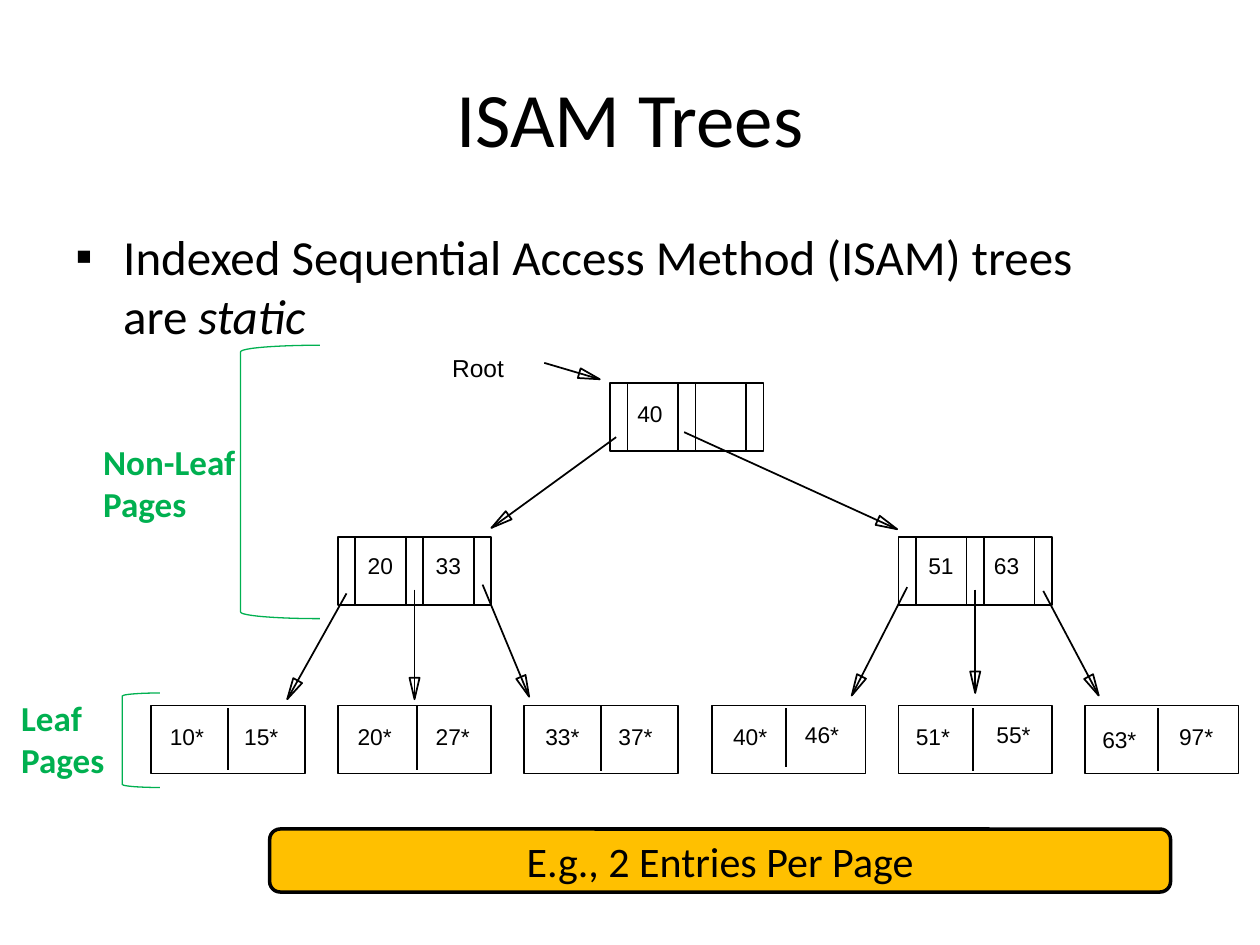
"""Build the ISAM Trees slide: a static two-level index over six leaf pages."""
from math import hypot

from lxml.etree import SubElement
from pptx import Presentation
from pptx.dml.color import RGBColor
from pptx.enum.shapes import MSO_CONNECTOR, MSO_SHAPE
from pptx.enum.text import MSO_ANCHOR, MSO_AUTO_SIZE, PP_ALIGN
from pptx.oxml.ns import qn
from pptx.util import Pt

PX = 9144
THEME = {
    "ink": RGBColor(0, 0, 0), "green": RGBColor(0, 0xB0, 0x50),
    "gold": RGBColor(0xFF, 0xC0, 0), "sans": "Calibri", "label": "Arial",
    "title": 44, "body": 28, "note": 24, "side": 20, "root": 14, "key": 13,
}

TITLE = "ISAM Trees"
BODY = "Indexed Sequential Access Method (ISAM) trees \vare "
EMPHASIS = "static"
NOTE = "E.g., 2 Entries Per Page"

PAGE_W, PAGE_H = 122, 54
LEAF_LEFT, LEAF_TOP, LEAF_STEP = 120, 560, 148.2
KEY_DIVIDERS = (14, 54, 68, 108)

# (left, top, keys as (text, left, top))
INDEX_PAGES = [
    (484, 304, [("40", 496, 312)]),
    (268, 426, [("20", 282, 433), ("33", 336, 433)]),
    (713, 426, [("51", 727, 433), ("63", 779, 433)]),
]
# (divider x, divider top, divider bottom, entries as (text, left, top))
LEAF_PAGES = [
    (181, 562, 611, [("10*", 125, 569), ("15*", 184, 569)]),
    (331, 560, 611, [("20*", 274, 569), ("27*", 336, 569)]),
    (477, 560, 612, [("33*", 423, 569), ("37*", 481, 569)]),
    (624, 562, 609, [("40*", 572, 569), ("46*", 629, 567)]),
    (772, 562, 612, [("51*", 717, 569), ("55*", 781, 567)]),
    (919, 562, 612, [("63*", 865, 571), ("97*", 926, 569)]),
]
ARROWS = [
    (432, 288, 476, 301),
    (489, 347, 390, 419), (543, 343, 712, 420),
    (275, 471, 228, 555), (329, 468, 329, 555), (383, 464, 420, 553),
    (720, 466, 676, 552), (774, 468, 774, 550), (828, 469, 872, 552),
]
# (text, text box, bracket box)
LEVELS = [
    ("Non-Leaf \vPages", (72, 345, 132, 77), (191, 274, 63, 217)),
    ("Leaf \vPages", (7, 548, 87, 77), (97, 550, 30, 75)),
]


def emu(*lengths):
    return [round(n * PX) for n in lengths]


def style(p, size, font=THEME["sans"], color=THEME["ink"], bold=None):
    for r in p.runs:
        r.font.size, r.font.name, r.font.bold = Pt(size), font, bold
        r.font.color.rgb = color


def add_label(s, text, box, size, **look):
    tf = s.shapes.add_textbox(*emu(*box)).text_frame
    tf.word_wrap = False
    tf.auto_size = MSO_AUTO_SIZE.SHAPE_TO_FIT_TEXT
    tf.text = text
    style(tf.paragraphs[0], size, **look)


def outline(sp, color=THEME["ink"], width=1, fill=None):
    sp.shadow.inherit = False
    if fill is None:
        sp.fill.background()
    else:
        sp.fill.solid()
        sp.fill.fore_color.rgb = fill
    sp.line.color.rgb, sp.line.width = color, Pt(width)


def add_box(s, kind, box, **look):
    sp = s.shapes.add_shape(kind, *emu(*box))
    outline(sp, **look)
    return sp


def add_line(s, x1, y1, x2, y2):
    line = s.shapes.add_connector(MSO_CONNECTOR.STRAIGHT, *emu(x1, y1, x2, y2))
    line.line.color.rgb, line.line.width = THEME["ink"], Pt(1)
    SubElement(line._element.spPr, qn("a:effectLst"))


def add_arrow(s, x1, y1, x2, y2, length=17, half=4):
    add_line(s, x1, y1, x2, y2)
    dist = hypot(x2 - x1, y2 - y1)
    ux, uy = (x2 - x1) / dist, (y2 - y1) / dist
    bx, by = x2 - length * ux, y2 - length * uy
    corners = [(bx - half * uy, by + half * ux), (bx + half * uy, by - half * ux)]
    head = s.shapes.build_freeform(*emu(x2, y2))
    head.add_line_segments([emu(*c) for c in corners], close=True)
    outline(head.convert_to_shape())


def add_page(s, left, top, dividers, labels, label_w):
    add_box(s, MSO_SHAPE.RECTANGLE, (left, top, PAGE_W, PAGE_H))
    for x, y1, y2 in dividers:
        add_line(s, x, y1, x, y2)
    for text, x, y in labels:
        add_label(s, text, (x, y, label_w, 32), THEME["key"], font=THEME["label"])


def add_title(s):
    sp = s.shapes.title
    sp.left, sp.top, sp.width, sp.height = emu(50, 30, 900, 125)
    tf = sp.text_frame
    tf.text, tf.vertical_anchor = TITLE, MSO_ANCHOR.MIDDLE
    tf.paragraphs[0].alignment = PP_ALIGN.CENTER
    style(tf.paragraphs[0], THEME["title"])


def add_body(s):
    tf = s.shapes.add_textbox(*emu(50, 175, 900, 550)).text_frame
    tf.word_wrap = True
    p = tf.paragraphs[0]
    p.text = BODY
    r = p.add_run()
    r.text, r.font.italic = EMPHASIS, True
    style(p, THEME["body"])
    pPr = p._p.get_or_add_pPr()
    pPr.set("marL", str(38 * PX))
    pPr.set("indent", str(-38 * PX))
    SubElement(pPr, qn("a:buFont"), typeface=THEME["label"])
    SubElement(pPr, qn("a:buChar"), char="▪")
    p.space_before = Pt(THEME["body"] * 0.2)


def add_note(s):
    sp = add_box(s, MSO_SHAPE.ROUNDED_RECTANGLE, (214, 658, 715, 50),
                 width=2, fill=THEME["gold"])
    tf = sp.text_frame
    tf.text, tf.vertical_anchor = NOTE, MSO_ANCHOR.MIDDLE
    tf.paragraphs[0].alignment = PP_ALIGN.CENTER
    style(tf.paragraphs[0], THEME["note"])


def main():
    prs = Presentation()
    prs.slide_width, prs.slide_height = emu(1000, 750)
    s = prs.slides.add_slide(prs.slide_layouts[5])
    add_title(s)
    add_body(s)
    add_note(s)
    for left, top, keys in INDEX_PAGES:
        dividers = [(left + dx, top, top + PAGE_H) for dx in KEY_DIVIDERS]
        add_page(s, left, top, dividers, keys, 40)
    for i, (x, y1, y2, entries) in enumerate(LEAF_PAGES):
        left = round(LEAF_LEFT + i * LEAF_STEP)
        add_page(s, left, LEAF_TOP, [(x, y1, y2)], entries, 47)
    for arrow in ARROWS:
        add_arrow(s, *arrow)
    add_label(s, "Root", (349, 275, 64, 33), THEME["root"], font=THEME["label"])
    for text, box, bracket in LEVELS:
        add_box(s, MSO_SHAPE.LEFT_BRACKET, bracket, color=THEME["green"], width=0.75)
        add_label(s, text, box, THEME["side"], color=THEME["green"], bold=True)
    prs.save("out.pptx")


if __name__ == "__main__":
    main()
